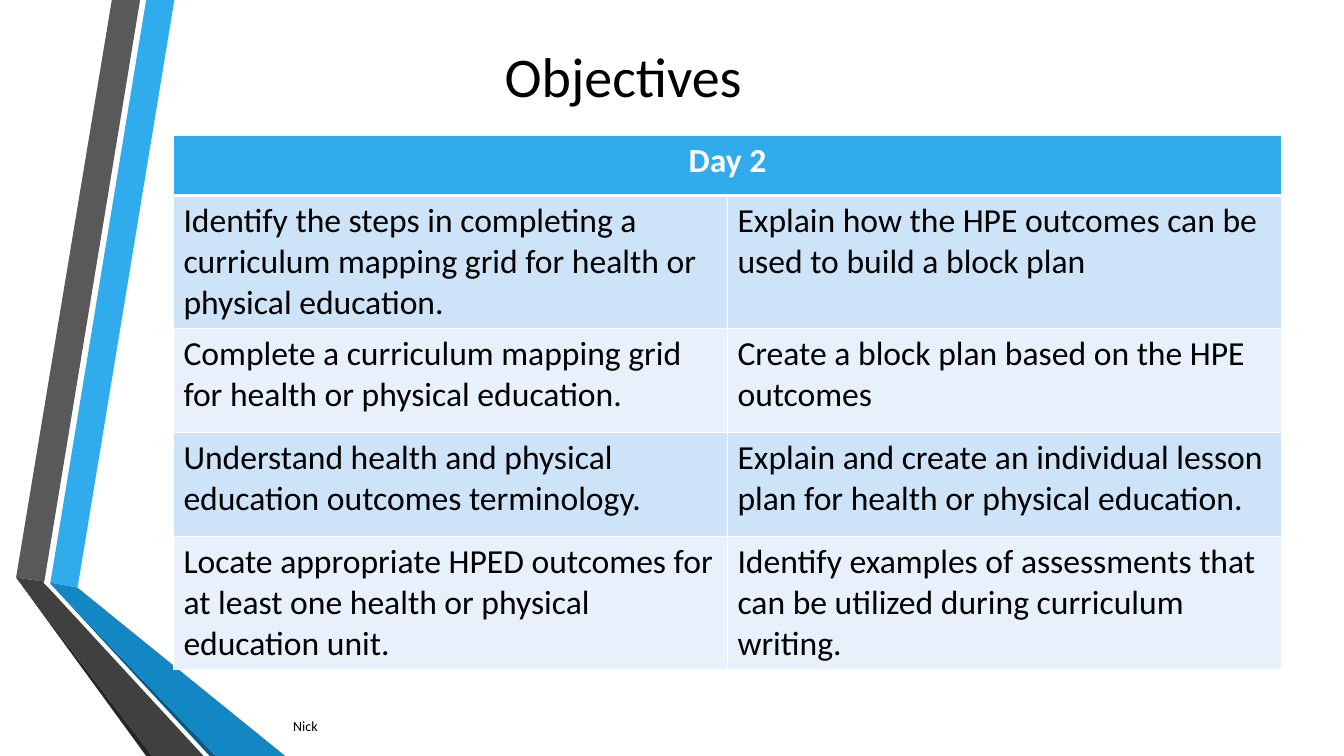
from lxml.etree import SubElement
from pptx import Presentation
from pptx.dml.color import RGBColor
from pptx.enum.text import MSO_ANCHOR, PP_ALIGN
from pptx.oxml.ns import qn
from pptx.util import Inches, Pt

# Content
TITLE = "Objectives"
PRESENTER = "Nick"
DAY = "Day 2"
OBJECTIVES = [
    ("Identify the steps in completing a curriculum mapping grid for health or physical education.",
     "Explain how the HPE outcomes can be used to build a block plan"),
    ("Complete a curriculum mapping grid for health or physical education.",
     "Create a block plan based on the HPE outcomes"),
    ("Understand health and physical education outcomes terminology.",
     "Explain and create an individual lesson plan for health or physical education."),
    ("Locate appropriate HPED outcomes for at least one health or physical education unit.",
     "Identify examples of assessments that can be utilized during curriculum writing."),
]
ROW_HEIGHTS = [0.6, 1.23, 1.03, 1.03, 1.23]
TABLE_BOX = (1.72, 1.34, 10.99, sum(ROW_HEIGHTS))


class Theme:
    font = "Calibri"
    title_size, table_size, presenter_size = 40, 24, 10
    text, white = "000000", "FFFFFF"
    header = "30ACEC"
    bands = ("CDE3F8", "E8F1FB")
    rule, header_rule = 1, 3


# Ribbon bands at the left edge: colour and corner points in inches
RIBBONS = [
    (Theme.header, [(0.5, 5.78), (0.77, 5.83), (1.73, 0), (1.45, 0)]),
    ("595959", [(1.39, 0), (1.11, 0), (0.16, 5.73), (0.44, 5.77)]),
    ("262626", [(0.16, 5.73), (1.45, 7.5), (1.51, 7.5)]),
    ("0C5A82", [(0.5, 5.79), (2.08, 7.5), (2.14, 7.5)]),
    ("1287C3", [(0.5, 5.79), (2.14, 7.5), (2.83, 7.5), (0.77, 5.83), (0.5, 5.78)]),
    ("404040", [(2.02, 7.5), (0.48, 5.83), (0.43, 5.78), (0.44, 5.77), (0.16, 5.73), (1.51, 7.5)]),
]


def box(lengths):
    return [Inches(length) for length in lengths]


def write(frame, text, size, color=Theme.text, bold=False, align=PP_ALIGN.LEFT):
    paragraph = frame.paragraphs[0]
    paragraph.alignment = align
    run = paragraph.add_run()
    run.text = text
    run.font.name = Theme.font
    run.font.size = Pt(size)
    run.font.bold = bold
    run.font.color.rgb = RGBColor.from_string(color)


def draw_ribbon(slide, color, points):
    corners = [box(point) for point in points]
    builder = slide.shapes.build_freeform(*corners[0])
    builder.add_line_segments(corners[1:], close=True)
    ribbon = builder.convert_to_shape()
    ribbon.shadow.inherit = False
    ribbon.fill.solid()
    ribbon.fill.fore_color.rgb = RGBColor.from_string(color)
    ribbon.line.fill.background()


def style_cell(cell, fill, bottom_rule=Theme.rule):
    properties = cell._tc.get_or_add_tcPr()
    for side in "LRTB":
        width = bottom_rule if side == "B" else Theme.rule
        line = SubElement(properties, qn(f"a:ln{side}"), w=str(Pt(width)))
        SubElement(SubElement(line, qn("a:solidFill")), qn("a:srgbClr"), val=Theme.white)
    cell.fill.solid()
    cell.fill.fore_color.rgb = RGBColor.from_string(fill)


def add_objectives(slide):
    table = slide.shapes.add_table(len(ROW_HEIGHTS), 2, *box(TABLE_BOX)).table
    for column in table.columns:
        column.width = Inches(TABLE_BOX[2] / 2)
    for row, height in zip(table.rows, ROW_HEIGHTS):
        row.height = Inches(height)

    # Header across both columns
    day = table.cell(0, 0)
    day.merge(table.cell(0, 1))
    for column in range(2):
        style_cell(table.cell(0, column), Theme.header, Theme.header_rule)
    write(day.text_frame, DAY, Theme.table_size, Theme.white, True, PP_ALIGN.CENTER)

    # Banded objectives
    for index, pair in enumerate(OBJECTIVES):
        for column, objective in enumerate(pair):
            cell = table.cell(index + 1, column)
            style_cell(cell, Theme.bands[index % 2], Theme.rule)
            write(cell.text_frame, objective, Theme.table_size)


def main():
    deck = Presentation()
    deck.slide_width, deck.slide_height = box((13.33, 7.5))
    slide = deck.slides.add_slide(deck.slide_layouts[5])

    # Ribbons
    for color, points in RIBBONS:
        draw_ribbon(slide, color, points)

    # Title
    title = slide.shapes.title
    title.left, title.top, title.width, title.height = box((1.72, 0.25, 8.92, 0.99))
    title.text_frame.vertical_anchor = MSO_ANCHOR.MIDDLE
    write(title.text_frame, TITLE, Theme.title_size, align=PP_ALIGN.CENTER)

    # Table
    add_objectives(slide)

    # Presenter
    presenter = slide.shapes.add_textbox(*box((2.81, 7.03, 7.75, 0.35))).text_frame
    presenter.word_wrap = True
    presenter.vertical_anchor = MSO_ANCHOR.MIDDLE
    write(presenter, PRESENTER, Theme.presenter_size)

    deck.save("out.pptx")


if __name__ == "__main__":
    main()
